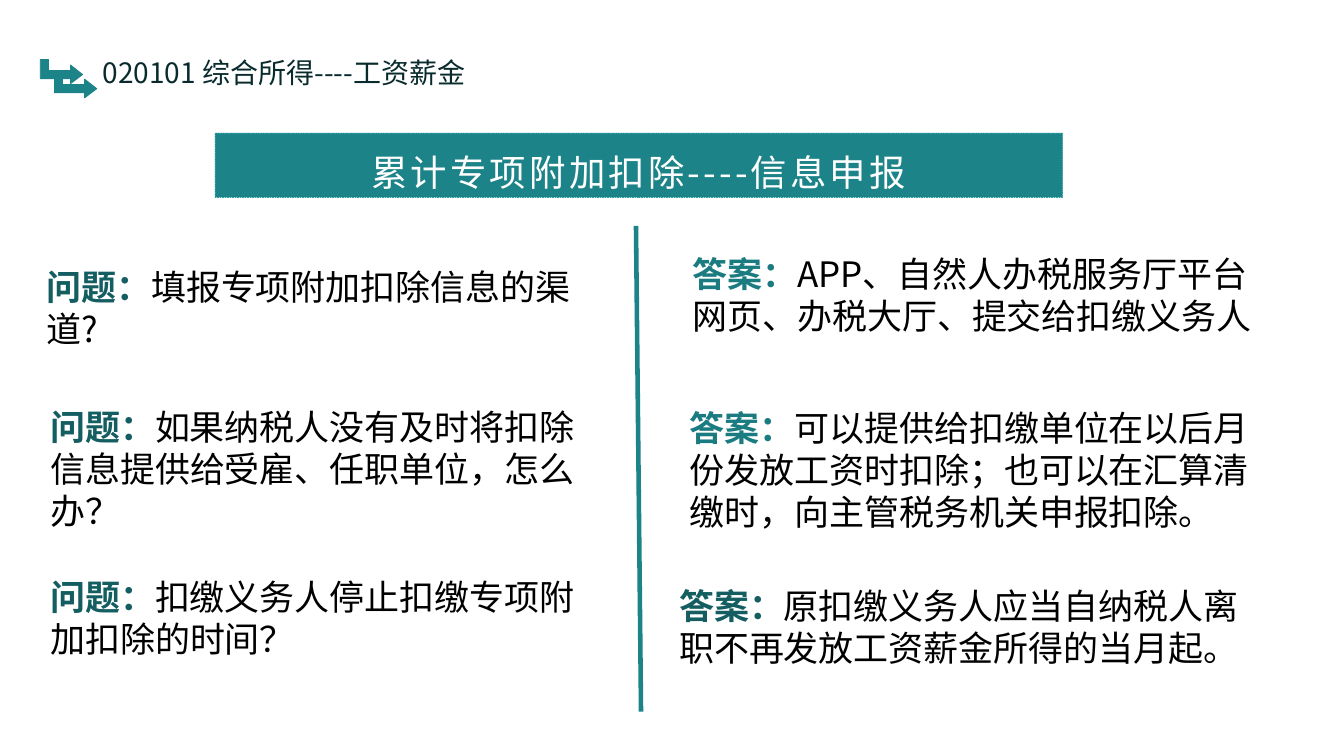
from lxml import etree
from pptx import Presentation
from pptx.dml.color import RGBColor
from pptx.enum import dml, shapes, text
from pptx.oxml import ns
from pptx.util import Pt

FONT = "Noto Sans CJK SC"
COLORS = {
    "teal": "1C8388", "edge": "309FA2", "heading": "092B2D",
    "deep": "145E62", "bright": "1A7B80", "black": "000000", "white": "FFFFFF",
}
HEADING = "020101 综合所得----工资薪金"
BANNER = "累计专项附加扣除----信息申报"
ENTRIES = [
    ("问题：", "填报专项附加扣除信息的渠道?", "deep", (26, 186, 410, 66)),
    ("答案：", "APP、自然人办税服务厅平台网页、办税大厅、提交给扣缴义务人", "bright", (487.5, 177, 433.5, 66)),
    ("问题：", "如果纳税人没有及时将扣除信息提供给受雇、任职单位，怎么办？", "deep", (28.8, 286, 410, 95)),
    ("答案：", "可以提供给扣缴单位在以后月份发放工资时扣除；也可以在汇算清缴时，向主管税务机关申报扣除。", "bright", (485.5, 286.5, 433.5, 95)),
    ("问题：", "扣缴义务人停止扣缴专项附加扣除的时间？", "deep", (28.8, 407.5, 410, 66)),
    ("答案：", "原扣缴义务人应当自纳税人离职不再发放工资薪金所得的当月起。", "deep", (478, 414, 436, 66)),
]
ARROW_ORIGINS = [(38.9, 52.6), (28.8, 42.5)]
ARROW_OUTLINE = [
    (0, 0), (5.8, 0), (5.8, 7.9), (21.6, 7.9), (21.6, 4),
    (30.2, 10.8), (21.6, 17.3), (21.6, 13.7), (0, 13.7),
]


def color(name):
    return RGBColor.from_string(COLORS[name])


def paint(shape, edge, width):
    shape.shadow.inherit = False
    shape.fill.solid()
    shape.fill.fore_color.rgb = color("teal")
    shape.line.color.rgb = color(edge)
    shape.line.width = Pt(width)


def write(shape, spans, size, line_height):
    frame = shape.text_frame
    frame.word_wrap = True
    frame.vertical_anchor = text.MSO_ANCHOR.TOP
    para = frame.paragraphs[0]
    para.line_spacing = Pt(line_height)
    para.font.size = Pt(size)
    para.font.name = FONT
    for words, name, bold in spans:
        span = para.add_run()
        span.text = words
        span.font.bold = bold
        span.font.color.rgb = color(name)
        east = etree.SubElement(span.font._element, ns.qn("a:ea"))
        east.set("typeface", FONT)
    return para


def add_text(page, place, spans, size, line_height):
    box = page.shapes.add_textbox(*map(Pt, place))
    write(box, spans, size, line_height)


def add_arrow(page, left, top):
    points = [(Pt(left + x), Pt(top + y)) for x, y in ARROW_OUTLINE]
    builder = page.shapes.build_freeform(*points[0])
    builder.add_line_segments(points[1:], close=True)
    paint(builder.convert_to_shape(), "teal", 0.6)


def add_banner(page):
    banner = page.shapes.add_shape(shapes.MSO_SHAPE.RECTANGLE, *map(Pt, (153.5, 95, 605.5, 46)))
    paint(banner, "edge", 0.25)
    banner.line.dash_style = dml.MSO_LINE.DASH
    frame = banner.text_frame
    frame.margin_left = frame.margin_right = Pt(5.8)
    frame.margin_top = frame.margin_bottom = Pt(2.9)
    para = write(banner, [(BANNER, "white", False)], 26, 40.2)
    para.alignment = text.PP_ALIGN.CENTER
    para.runs[0].font._element.set("spc", "220")


def add_divider(page):
    divider = page.shapes.add_connector(
        shapes.MSO_CONNECTOR.STRAIGHT, *map(Pt, (454.3, 161.3, 457.9, 508.3)))
    divider.line.color.rgb = color("teal")
    divider.line.width = Pt(3.25)
    etree.SubElement(divider._element.spPr, ns.qn("a:effectLst"))


def main():
    deck = Presentation()
    deck.slide_width, deck.slide_height = Pt(960), Pt(540)
    page = deck.slides.add_slide(deck.slide_layouts[6])
    add_text(page, (66.2, 36, 286, 30), [(HEADING, "heading", False)], 20, 24)
    for origin in ARROW_ORIGINS:
        add_arrow(page, *origin)
    add_banner(page)
    add_divider(page)
    for label, words, name, place in ENTRIES:
        add_text(page, place, [(label, name, True), (words, "black", False)], 25, 30)
    deck.save("out.pptx")


if __name__ == "__main__":
    main()
